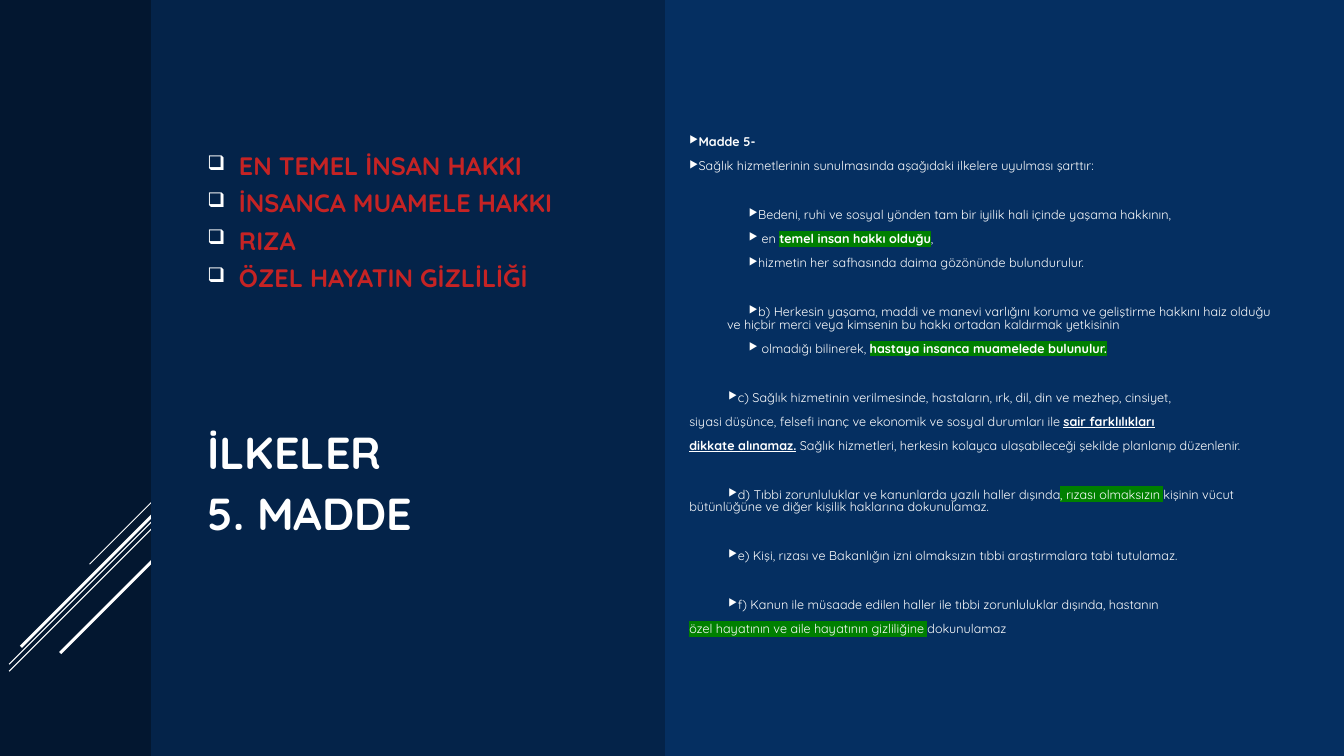
from lxml.etree import SubElement
from pptx import Presentation
from pptx.dml.color import RGBColor
from pptx.enum.shapes import MSO_CONNECTOR as CONN, MSO_SHAPE as SHAPE
from pptx.enum.text import MSO_ANCHOR as ANCHOR, MSO_AUTO_SIZE as AUTO, PP_ALIGN as ALIGN
from pptx.oxml.ns import qn
from pptx.util import Pt

NAVY = RGBColor(0x05, 0x2F, 0x61)
PANEL = RGBColor(0x04, 0x23, 0x49)
STRIP = RGBColor(0x03, 0x17, 0x30)
WHITE = RGBColor(0xFF, 0xFF, 0xFF)
RED = RGBColor(0xC6, 0x23, 0x24)
GREEN = RGBColor(0x00, 0x80, 0x00)

WIDTH, HEIGHT = 960, 540
BLANK_LINE = 17.6

# Diagonals: right end y, left end x, weight; all run at 45 degrees
DIAGONAL_RIGHT = 118
DIAGONALS = [(349, 64, 0.75), (363, 6.5, 0.75), (368, 6.5, 0.75),
             (359, 15, 2.25), (391.5, 43, 2.25)]

RIGHTS = ["EN TEMEL İNSAN HAKKI", "İNSANCA MUAMELE HAKKI", "RIZA",
          "ÖZEL HAYATIN GİZLİLİĞİ"]
HEADING = ["İLKELER", "5. MADDE"]

# Left margin and first-line indent of each kind of paragraph
FLUSH, CLAUSE, SUBCLAUSE = (0, 0), (0, 28), (27, 15.5)

# Indent, bullet, gap above, runs (text, marks: b bold, u underline, h highlight)
ARTICLE = [
    (FLUSH, True, False, [("Madde 5-", "b")]),
    (FLUSH, True, False,
     [("Sağlık hizmetlerinin sunulmasında aşağıdaki ilkelere uyulması şarttır:", "")]),
    (SUBCLAUSE, True, True,
     [("Bedeni, ruhi ve sosyal yönden tam bir iyilik hali içinde yaşama hakkının,", "")]),
    (SUBCLAUSE, True, False,
     [(" en ", ""), ("temel insan hakkı olduğu", "bh"), (",", "")]),
    (SUBCLAUSE, True, False,
     [("hizmetin her safhasında daima gözönünde bulundurulur.", "")]),
    (SUBCLAUSE, True, True,
     [("b) Herkesin yaşama, maddi ve manevi varlığını koruma ve geliştirme hakkını haiz "
       "olduğu ve hiçbir merci veya kimsenin bu hakkı ortadan kaldırmak yetkisinin", "")]),
    (SUBCLAUSE, True, False,
     [(" olmadığı bilinerek, ", ""), ("hastaya insanca muamelede bulunulur.", "bh")]),
    (CLAUSE, True, True,
     [("c) Sağlık hizmetinin verilmesinde, hastaların, ırk, dil, din ve mezhep, cinsiyet,", "")]),
    (FLUSH, False, False,
     [("siyasi düşünce, felsefi inanç ve ekonomik ve sosyal durumları ile ", ""),
      ("sair farklılıkları", "bu")]),
    (FLUSH, False, False,
     [("dikkate alınamaz.", "bu"),
      (" Sağlık hizmetleri, herkesin kolayca ulaşabileceği şekilde planlanıp düzenlenir.", "")]),
    (CLAUSE, True, True,
     [("d) Tıbbi zorunluluklar ve kanunlarda yazılı haller dışında", ""),
      (", rızası olmaksızın ", "h"),
      ("kişinin vücut bütünlüğüne ve diğer kişilik haklarına dokunulamaz.", "")]),
    (CLAUSE, True, True,
     [("e) Kişi, rızası ve Bakanlığın izni olmaksızın tıbbi araştırmalara tabi tutulamaz.", "")]),
    (CLAUSE, True, True,
     [("f) Kanun ile müsaade edilen haller ile tıbbi zorunluluklar dışında, hastanın", "")]),
    (FLUSH, False, False,
     [("özel hayatının ve aile hayatının gizliliğine ", "h"), ("dokunulamaz", "")]),
]


class Deck:
    font = "Quicksand"

    def __init__(self, prs):
        self.s = prs.slides.add_slide(prs.slide_layouts[5])
        fill = self.s.background.fill
        fill.solid()
        fill.fore_color.rgb = NAVY

    def panel(self, x, width, color):
        sp = self.s.shapes.add_shape(SHAPE.RECTANGLE, Pt(x), 0, Pt(width), Pt(HEIGHT))
        sp.shadow.inherit = False
        sp.fill.solid()
        sp.fill.fore_color.rgb = color
        sp.line.fill.background()

    def line(self, x1, y1, x2, y2, weight):
        cx = self.s.shapes.add_connector(CONN.STRAIGHT, Pt(x1), Pt(y1), Pt(x2), Pt(y2))
        cx.line.color.rgb = WHITE
        cx.line.width = Pt(weight)
        SubElement(cx._element.spPr, qn("a:effectLst"))

    def title(self, x, y, width, height, top):
        sp = self.s.shapes.title
        self.s.shapes._spTree.append(sp._element)  # in front of the panels
        sp.left, sp.top, sp.width, sp.height = Pt(x), Pt(y), Pt(width), Pt(height)
        return self.frame(sp, top)

    def text_box(self, x, y, width, height, top):
        sp = self.s.shapes.add_textbox(Pt(x), Pt(y), Pt(width), Pt(height))
        return self.frame(sp, top)

    def frame(self, sp, top):
        tf = sp.text_frame
        tf.word_wrap = True
        tf.auto_size = AUTO.NONE
        tf.vertical_anchor = ANCHOR.TOP
        tf.margin_top = Pt(top)
        return tf

    def paragraph(self, tf, indent=FLUSH, bullet=None, before=0, after=5, spacing=1.0):
        p = tf.paragraphs[0]
        if p.runs:
            p = tf.add_paragraph()
        p.alignment = ALIGN.LEFT
        p.line_spacing = spacing
        p.space_before, p.space_after = Pt(before), Pt(after)
        pPr = p._p.get_or_add_pPr()
        pPr.set("marL", str(Pt(indent[0])))
        pPr.set("indent", str(Pt(indent[1])))
        if bullet:
            color = SubElement(pPr, qn("a:buClr"))
            SubElement(color, qn("a:srgbClr"), val=str(WHITE))
            SubElement(pPr, qn("a:buSzPct"), val="80000")
            SubElement(pPr, qn("a:buChar"), char=bullet)
        return p

    def run(self, p, text, size, color=WHITE, marks=""):
        r = p.add_run()
        r.text = text
        r.font.size = Pt(size)
        r.font.bold = "b" in marks
        r.font.underline = "u" in marks
        r.font.color.rgb = color
        if "h" in marks:
            highlight = SubElement(r.font._element, qn("a:highlight"))
            SubElement(highlight, qn("a:srgbClr"), val=str(GREEN))
        r.font.name = self.font


def main():
    prs = Presentation()
    prs.slide_width, prs.slide_height = Pt(WIDTH), Pt(HEIGHT)
    deck = Deck(prs)

    deck.panel(0, 113, STRIP)
    for y, x, weight in DIAGONALS:
        deck.line(DIAGONAL_RIGHT, y, x, y + DIAGONAL_RIGHT - x, weight)
    deck.panel(108, 367, PANEL)

    tf = deck.text_box(485.3, 34.5, 441, 474.5, top=63)
    for indent, bullet, gap, runs in ARTICLE:
        before = 2.25 + (BLANK_LINE if gap else 0)
        p = deck.paragraph(tf, indent, "▶" if bullet else None, before, 6, 0.83)
        for text, marks in runs:
            deck.run(p, text, 9, marks=marks)

    tf = deck.title(141, 62, 283, 418, top=45.5)
    for text in RIGHTS:
        p = deck.paragraph(tf, (22.5, -22.5), "❑")
        deck.run(p, text, 18, RED, "b")
    for i, text in enumerate(HEADING):
        p = deck.paragraph(tf, before=0 if i else 89.5)
        deck.run(p, text, 32, marks="b")

    prs.save("out.pptx")


if __name__ == "__main__":
    main()
